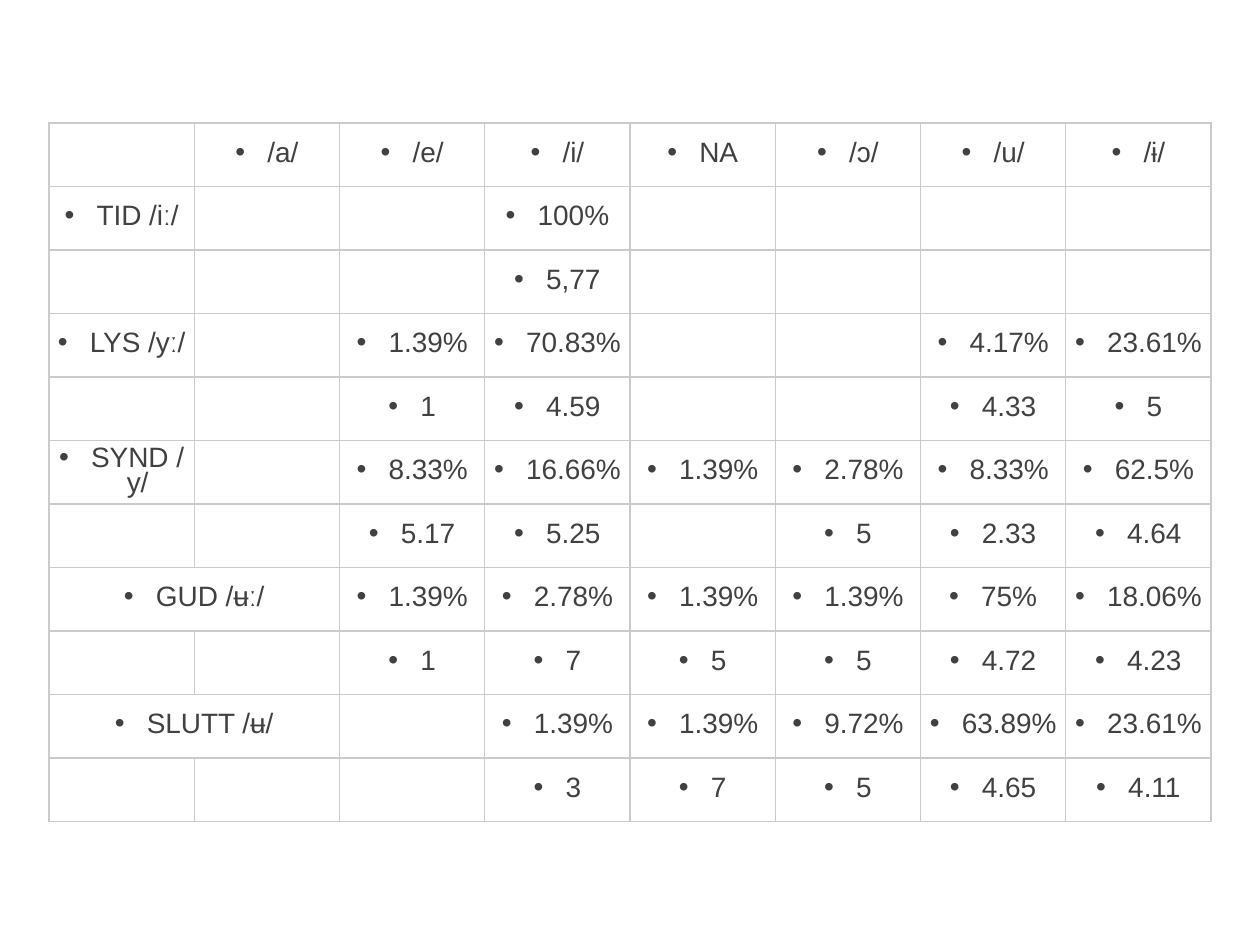
from dataclasses import dataclass

import pptx
import pptx.dml.color
import pptx.enum.text
import pptx.oxml
import pptx.oxml.ns
import pptx.table
import pptx.util


@dataclass(frozen=True)
class Theme:
    font: str = "Arial"
    size: int = 16
    text: str = "414141"
    grid: str = "CBCBCB"
    grid_pt: int = 1
    line_spacing: float = 0.8


@dataclass(frozen=True)
class VowelRow:
    label: str
    values: tuple[str, ...]
    label_span: int = 1


THEME = Theme()
PX_PER_INCH = 126
INSET, BULLET_INDENT = 6, 32
A_NS = pptx.oxml.ns.nsdecls("a")

# Each word has a row of shares and, below it, a row of mean ratings
ROWS = (
    VowelRow("", ("/a/", "/e/", "/i/", "NA", "/ɔ/", "/u/", "/ɨ/")),
    VowelRow("TID /iː/", ("", "", "100%", "", "", "", "")),
    VowelRow("", ("", "", "5,77", "", "", "", "")),
    VowelRow("LYS /yː/", ("", "1.39%", "70.83%", "", "", "4.17%", "23.61%")),
    VowelRow("", ("", "1", "4.59", "", "", "4.33", "5")),
    VowelRow("SYND /y/", ("", "8.33%", "16.66%", "1.39%", "2.78%", "8.33%", "62.5%")),
    VowelRow("", ("", "5.17", "5.25", "", "5", "2.33", "4.64")),
    VowelRow("GUD /ʉː/", ("", "1.39%", "2.78%", "1.39%", "1.39%", "75%", "18.06%"), 2),
    VowelRow("", ("", "1", "7", "5", "5", "4.72", "4.23")),
    VowelRow("SLUTT /ʉ/", ("", "", "1.39%", "1.39%", "9.72%", "63.89%", "23.61%"), 2),
    VowelRow("", ("", "", "3", "7", "5", "4.65", "4.11")),
)


def px(n: int) -> int:
    return round(n * pptx.util.Inches(1) / PX_PER_INCH)


def style_cell(cell: pptx.table._Cell) -> None:
    """Draw the grid lines and clear the fill."""
    tc_pr = cell._tc.get_or_add_tcPr()
    for side in ("lnL", "lnR", "lnT", "lnB"):
        tc_pr.append(pptx.oxml.parse_xml(
            f'<a:{side} {A_NS} w="{pptx.util.Pt(THEME.grid_pt)}"><a:solidFill>'
            f'<a:srgbClr val="{THEME.grid}"/></a:solidFill></a:{side}>'))
    cell.fill.background()
    cell.vertical_anchor = pptx.enum.text.MSO_ANCHOR.MIDDLE
    cell.margin_left = cell.margin_right = px(INSET)
    cell.margin_top = cell.margin_bottom = 0


def write_cell(cell: pptx.table._Cell, text: str) -> None:
    """Write one centred, bulleted entry."""
    p = cell.text_frame.paragraphs[0]
    p.text = text
    p.alignment = pptx.enum.text.PP_ALIGN.CENTER
    p.line_spacing = THEME.line_spacing
    p_pr = p._p.get_or_add_pPr()
    p_pr.set("marL", str(px(BULLET_INDENT)))
    p_pr.set("indent", str(-px(BULLET_INDENT)))
    p_pr.append(pptx.oxml.parse_xml(f'<a:buFont {A_NS} typeface="{THEME.font}"/>'))
    p_pr.append(pptx.oxml.parse_xml(f'<a:buChar {A_NS} char="•"/>'))
    p.font.name = THEME.font
    p.font.size = pptx.util.Pt(THEME.size)
    p.font.color.rgb = pptx.dml.color.RGBColor.from_string(THEME.text)


def fill_row(table: pptx.table.Table, index: int, row: VowelRow) -> None:
    for col, text in enumerate((row.label, *row.values)):
        cell = table.cell(index, col)
        style_cell(cell)
        if text:
            write_cell(cell, text)
    if row.label_span > 1:
        table.cell(index, 0).merge(table.cell(index, row.label_span - 1))


def main() -> None:
    prs = pptx.Presentation()
    prs.slide_width, prs.slide_height = px(1260), px(945)
    s = prs.slides.add_slide(prs.slide_layouts[6])

    # Table of vowel responses, with equal columns and rows
    table = s.shapes.add_table(len(ROWS), 1 + len(ROWS[0].values),
                               px(49), px(123), px(1162), px(699)).table
    table.first_row = table.horz_banding = False
    for index, row in enumerate(ROWS):
        fill_row(table, index, row)

    prs.save("out.pptx")


if __name__ == "__main__":
    main()
